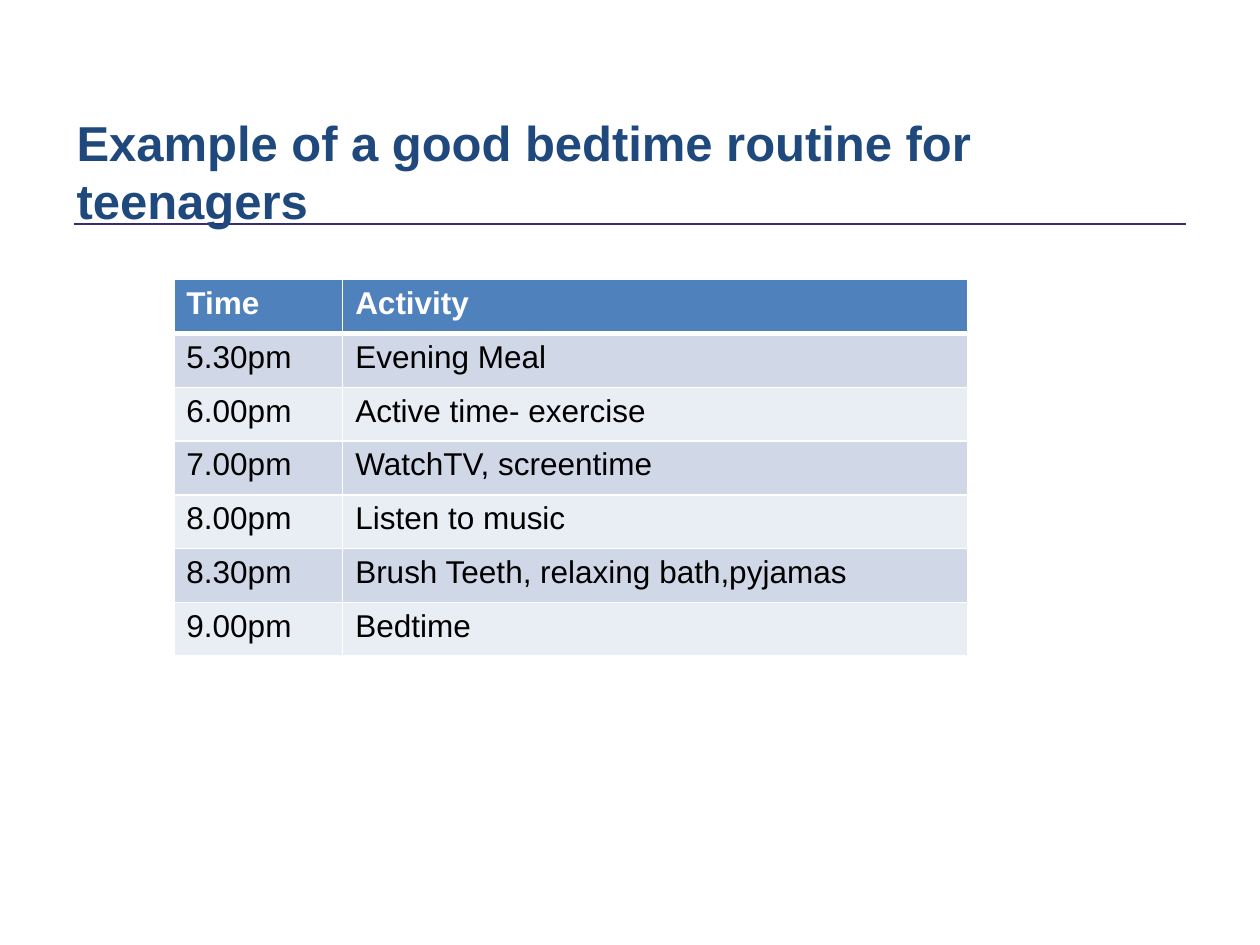
from dataclasses import dataclass

from lxml import etree
from pptx import Presentation
from pptx.dml.color import RGBColor
from pptx.enum.shapes import MSO_CONNECTOR
from pptx.enum.text import MSO_ANCHOR
from pptx.oxml.ns import qn
from pptx.util import Inches, Pt

STRAIGHT = MSO_CONNECTOR.STRAIGHT
TOP = MSO_ANCHOR.TOP


@dataclass(frozen=True)
class Theme:
    font: str = "Arial"
    title_size: int = 28
    table_size: int = 18
    title: str = "1F497D"
    rule: str = "332D7C"
    header: str = "4F81BD"
    bands: tuple = ("D0D8E8", "E9EDF4")
    white: str = "FFFFFF"
    black: str = "000000"


theme = Theme()


def style_text(p, size, color, bold):
    p.font.name = theme.font
    p.font.size = Pt(size)
    p.font.bold = bold
    p.font.color.rgb = RGBColor.from_string(color)


def set_borders(cell, widths):
    """Draw white cell borders; widths maps each side to points."""
    tcPr = cell._tc.get_or_add_tcPr()
    for i, (side, width) in enumerate(widths.items()):
        ln = etree.Element(qn(f"a:ln{side}"), w=str(Pt(width)))
        fill = etree.SubElement(ln, qn("a:solidFill"))
        etree.SubElement(fill, qn("a:srgbClr"), val=theme.white)
        tcPr.insert(i, ln)


prs = Presentation()
prs.slide_width, prs.slide_height = Inches(10), Inches(7.5)
s = prs.slides.add_slide(prs.slide_layouts[6])

# Rule under the title
rule = s.shapes.add_connector(STRAIGHT, Inches(0.59), Inches(1.78), Inches(9.41), Inches(1.78))
rule.line.color.rgb = RGBColor.from_string(theme.rule)
rule.line.width = Pt(1)
etree.SubElement(rule._element.spPr, qn("a:effectLst"))

# Title
title = s.shapes.add_textbox(Inches(0.51), Inches(0.84), Inches(9), Inches(0.63))
tf = title.text_frame
tf.word_wrap = True
tf.vertical_anchor = TOP
p = tf.paragraphs[0]
p.text = "Example of a good bedtime routine for teenagers"
style_text(p, theme.title_size, theme.title, True)

# Routine table
routine = [
    ("Time", "Activity"),
    ("5.30pm", "Evening Meal"),
    ("6.00pm", "Active time- exercise"),
    ("7.00pm", "WatchTV, screentime"),
    ("8.00pm", "Listen to music"),
    ("8.30pm", "Brush Teeth, relaxing bath,pyjamas"),
    ("9.00pm", "Bedtime"),
]
table = s.shapes.add_table(
    len(routine), 2, Inches(1.38), Inches(2.22), Inches(6.3), Inches(2.99)
).table
for column, width in zip(table.columns, (1.34, 4.96)):
    column.width = Inches(width)

for i, row in enumerate(routine):
    is_header = i == 0
    fill = theme.header if is_header else theme.bands[(i - 1) % 2]
    color = theme.white if is_header else theme.black
    # A thicker line separates the header from the first entry
    borders = {"L": 1, "R": 1, "T": 3 if i == 1 else 1, "B": 3 if is_header else 1}
    for j, text in enumerate(row):
        cell = table.cell(i, j)
        cell.fill.solid()
        cell.fill.fore_color.rgb = RGBColor.from_string(fill)
        set_borders(cell, borders)
        p = cell.text_frame.paragraphs[0]
        p.text = text
        style_text(p, theme.table_size, color, is_header)

prs.save("out.pptx")
